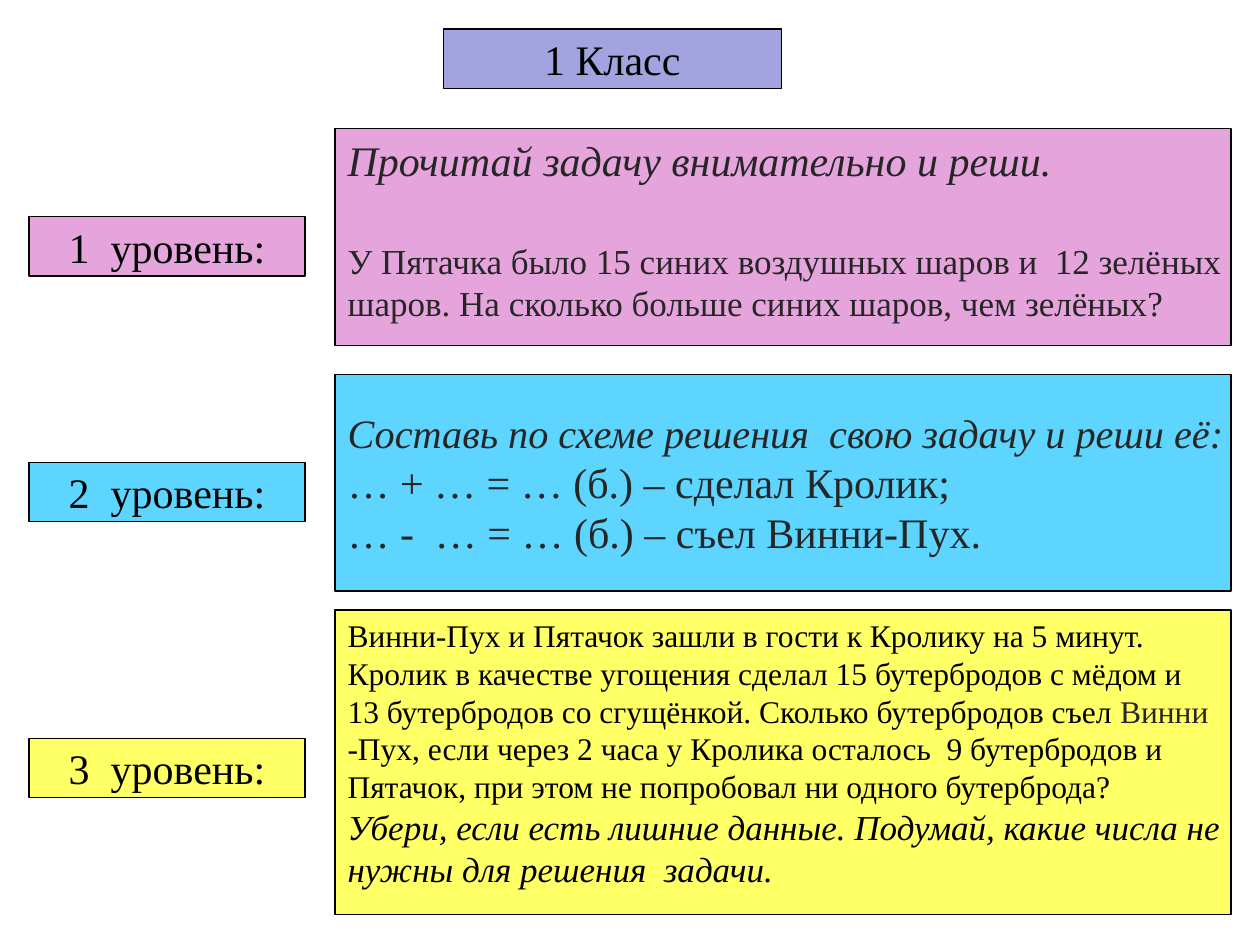
from pptx import Presentation
from pptx.dml.color import RGBColor
from pptx.enum.shapes import MSO_SHAPE
from pptx.enum.text import MSO_ANCHOR, MSO_AUTO_SIZE, PP_ALIGN
from pptx.util import Inches, Pt

RECT = MSO_SHAPE.RECTANGLE
TOP, MID = MSO_ANCHOR.TOP, MSO_ANCHOR.MIDDLE
LEFT, CENTER = PP_ALIGN.LEFT, PP_ALIGN.CENTER
FIXED = MSO_AUTO_SIZE.NONE

FONT = "Times New Roman"
BLACK, GREY = "000000", "262626"
LILAC, PINK, BLUE, YELLOW = "A3A3E0", "E5A5DC", "5DD5FF", "FFFF66"


def color(code):
    return RGBColor.from_string(code)


def paint(shape, fill, anchor=MID):
    """Fill and outline a box and set how its text sits."""
    shape.fill.solid()
    shape.fill.fore_color.rgb = color(fill)
    shape.line.color.rgb = color(BLACK)
    shape.line.width = Pt(0.75)
    frame = shape.text_frame
    frame.auto_size = FIXED
    frame.word_wrap = False
    frame.vertical_anchor = anchor


def add_box(slide, left, top, width, height, fill, anchor=MID):
    box = slide.shapes.add_shape(
        RECT, Inches(left), Inches(top), Inches(width), Inches(height))
    box.shadow.inherit = False
    paint(box, fill, anchor)
    return box


def add_run(para, text, size=24, ink=BLACK, italic=False):
    run = para.add_run()
    run.text = text
    font = run.font
    font.name, font.size, font.italic = FONT, Pt(size), italic
    font.color.rgb = color(ink)


def write(shape, text, align=LEFT, before=0, pitch=None, **style):
    """Add one paragraph, using the empty first one if it is free."""
    frame = shape.text_frame
    para = frame.paragraphs[0]
    if para.runs:
        para = frame.add_paragraph()
    para.alignment = align
    para.space_before = Pt(before)
    if pitch:
        para.line_spacing = Pt(pitch)
    add_run(para, text, **style)
    return para


def add_title(slide):
    title = slide.shapes.title
    title.left, title.top = Inches(3.52), Inches(0.23)
    title.width, title.height = Inches(2.68), Inches(0.47)
    paint(title, LILAC)
    write(title, "1 Класс", align=CENTER)


def add_task(slide, top, height, fill, anchor=MID):
    return add_box(slide, 2.66, top, 7.11, height, fill, anchor)


def add_tasks(slide):
    # Level 1: instruction and problem
    task = add_task(slide, 1.02, 1.72, PINK, TOP)
    write(task, "Прочитай задачу внимательно и реши.",
          pitch=28.8, ink=GREY, italic=True)
    write(task, "У Пятачка было 15 синих воздушных шаров и  12 зелёных",
          before=31, size=20, ink=GREY)
    write(task, "шаров. На сколько больше синих шаров, чем зелёных?",
          size=20, ink=GREY)

    # Level 2: problem to make up from a scheme
    task = add_task(slide, 2.97, 1.72, BLUE)
    write(task, "Составь по схеме решения  свою задачу и реши её:",
          size=23, ink=GREY, italic=True)
    for text in ("… + … = … (б.) – сделал Кролик;",
                 "… -  … = … (б.) – съел Винни-Пух."):
        write(task, text, ink=GREY)

    # Level 3: problem with extra data
    task = add_task(slide, 4.84, 2.42, YELLOW, TOP)
    for text in ("Винни-Пух и Пятачок зашли в гости к Кролику на 5 минут.",
                 "Кролик в качестве угощения сделал 15 бутербродов с мёдом и"):
        write(task, text, size=18)
    para = write(task, "13 бутербродов со сгущёнкой. Сколько бутербродов съел ",
                 size=18)
    add_run(para, "Винни", size=18, ink=GREY)
    for text in ("-Пух, если через 2 часа у Кролика осталось  9 бутербродов и",
                 "Пятачок, при этом не попробовал ни одного бутерброда?"):
        write(task, text, size=18)
    for text in ("Убери, если есть лишние данные. Подумай, какие числа не",
                 "нужны для решения  задачи."):
        write(task, text, size=20, italic=True)


def add_labels(slide):
    rows = ((1.72, PINK), (3.67, BLUE), (5.86, YELLOW))
    for level, (top, fill) in enumerate(rows, 1):
        label = add_box(slide, 0.23, top, 2.19, 0.47, fill)
        write(label, f"{level}  уровень:", align=CENTER)


def main():
    deck = Presentation()
    deck.slide_width, deck.slide_height = Inches(10), Inches(7.5)
    slide = deck.slides.add_slide(deck.slide_layouts[5])
    add_title(slide)
    add_tasks(slide)
    add_labels(slide)
    deck.save("out.pptx")


if __name__ == "__main__":
    main()
